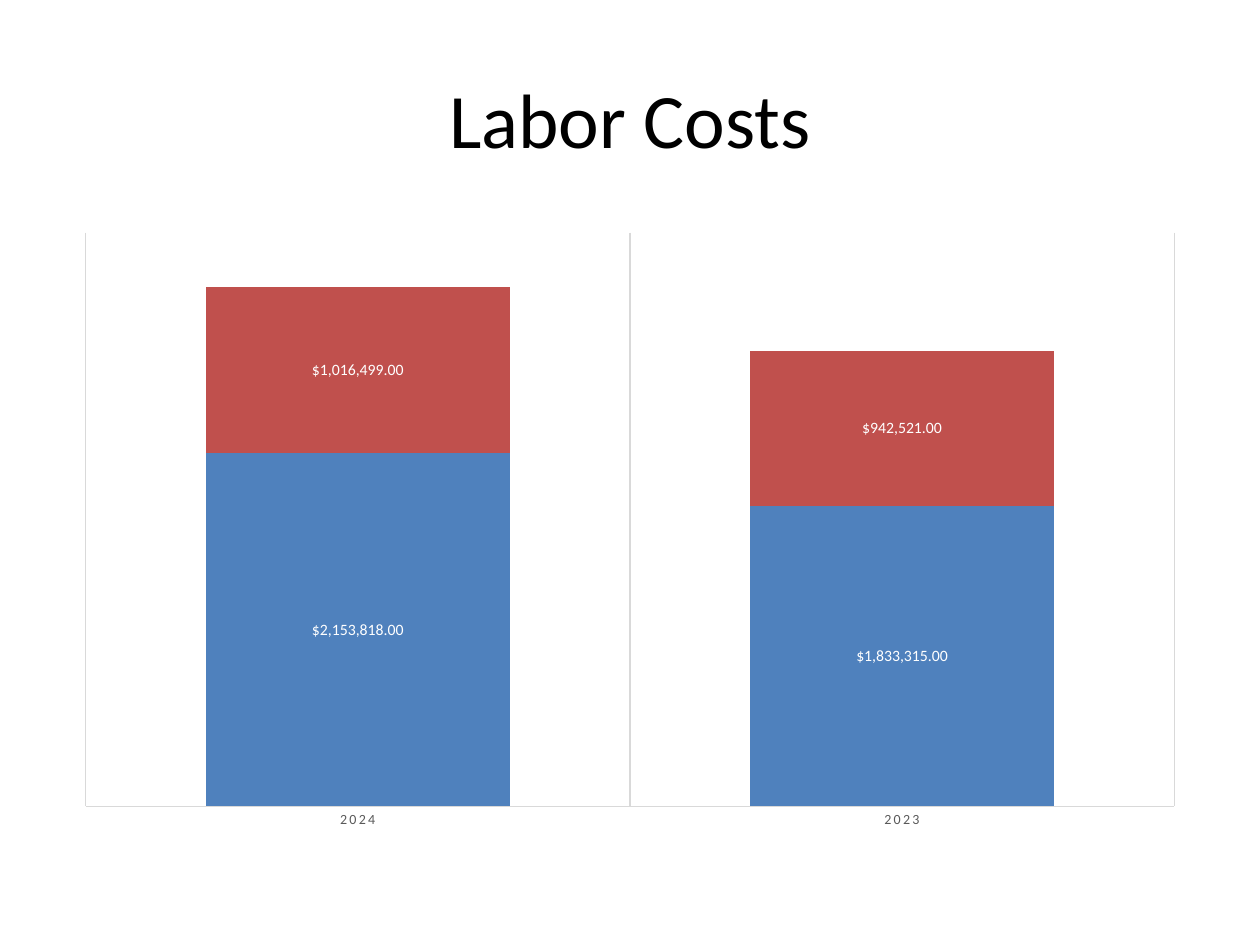
from lxml.etree import SubElement
from pptx import Presentation
from pptx.chart.data import CategoryChartData
from pptx.dml.color import RGBColor
from pptx.enum.chart import XL_CHART_TYPE as ChartType, XL_LABEL_POSITION as LabelPos, XL_TICK_MARK as Tick
from pptx.enum.text import MSO_ANCHOR as Anchor, PP_ALIGN as Align
from pptx.oxml.ns import qn
from pptx.util import Inches, Pt

COLORS = {"title": "000000", "axis": "595959", "grid": "D9D9D9", "label": "FFFFFF",
          "Series 1": "4F81BD", "Series 2": "C0504D"}
YEARS = ["2024", "2023"]
COSTS = {"Series 1": [2153818, 1833315], "Series 2": [1016499, 942521]}
DOLLARS = '"$"#,##0.00'
WIDTH, HEIGHT = Inches(10), Inches(7.5)
TITLE_BOX = (0.05, 0.04, 0.9, 0.17)
CHART_BOX = (0.05, 0.233, 0.9, 0.66)
PLOT_SHARES = {"x": 0.02, "y": 0.02, "w": 0.96, "h": 0.92}


def place(box):
    """Turn shares of the slide into lengths."""
    left, top, width, height = box
    return [int(share * size) for share, size in
            ((left, WIDTH), (top, HEIGHT), (width, WIDTH), (height, HEIGHT))]


def style_font(font, size, color):
    """Set typeface, size and colour of a font."""
    font.name, font.size = "Calibri", Pt(size)
    font.color.rgb = RGBColor.from_string(COLORS[color])


def style_rule(line):
    """Draw a line as a thin grey rule."""
    line.color.rgb = RGBColor.from_string(COLORS["grid"])
    line.width = Pt(0.75)


def add_heading(slide, box, wording):
    """Place the centred heading in its box."""
    frame = slide.shapes.add_textbox(*place(box)).text_frame
    frame.word_wrap = True
    frame.vertical_anchor = Anchor.MIDDLE
    frame.text = wording
    heading = frame.paragraphs[0]
    heading.alignment = Align.CENTER
    style_font(heading.runs[0].font, 44, "title")


def fix_plot_area(chart):
    """Pin the inner plot area to its shares of the chart."""
    plot_area = chart.element.find(".//" + qn("c:plotArea"))
    for layout in plot_area.findall(qn("c:layout")):
        plot_area.remove(layout)
    layout = SubElement(plot_area, qn("c:layout"))
    plot_area.insert(0, layout)
    manual = SubElement(layout, qn("c:manualLayout"))
    settings = {"layoutTarget": "inner", "xMode": "edge", "yMode": "edge", **PLOT_SHARES}
    for tag, setting in settings.items():
        SubElement(manual, qn("c:" + tag)).set("val", str(setting))


def style_axes(chart):
    """Show the years with vertical rules and hide the cost axis."""
    years, costs = chart.category_axis, chart.value_axis
    years.major_tick_mark = years.minor_tick_mark = Tick.NONE
    years.has_major_gridlines = True
    style_rule(years.format.line)
    style_rule(years.major_gridlines.format.line)
    style_font(years.tick_labels.font, 8, "axis")
    years.tick_labels.font.bold = False
    chart.element.find(".//" + qn("c:catAx")).find(".//" + qn("a:defRPr")).set("spc", "120")
    costs.has_major_gridlines = False
    costs.minimum_scale, costs.maximum_scale = 0, 3500000
    costs.visible = False


def add_cost_chart(slide, box):
    """Place the stacked column chart of labor costs."""
    table = CategoryChartData(number_format=DOLLARS)
    table.categories = YEARS
    for name, amounts in COSTS.items():
        table.add_series(name, amounts)
    chart = slide.shapes.add_chart(ChartType.COLUMN_STACKED, *place(box), table).chart
    chart.has_title = chart.has_legend = False
    style_font(chart.font, 10, "title")
    style_axes(chart)
    fix_plot_area(chart)
    columns = chart.plots[0]
    columns.gap_width, columns.overlap = 79, 100
    columns.vary_by_categories = False
    for series in columns.series:
        series.format.fill.solid()
        series.format.fill.fore_color.rgb = RGBColor.from_string(COLORS[series.name])
        labels = series.data_labels
        labels.show_value = True
        labels.position = LabelPos.CENTER
        labels.number_format, labels.number_format_is_linked = DOLLARS, False
        style_font(labels.font, 9, "label")


def main():
    """Build and save the slide."""
    deck = Presentation()
    deck.slide_width, deck.slide_height = WIDTH, HEIGHT
    slide = deck.slides.add_slide(deck.slide_layouts[6])
    add_heading(slide, TITLE_BOX, "Labor Costs")
    add_cost_chart(slide, CHART_BOX)
    deck.save("out.pptx")


if __name__ == "__main__":
    main()
